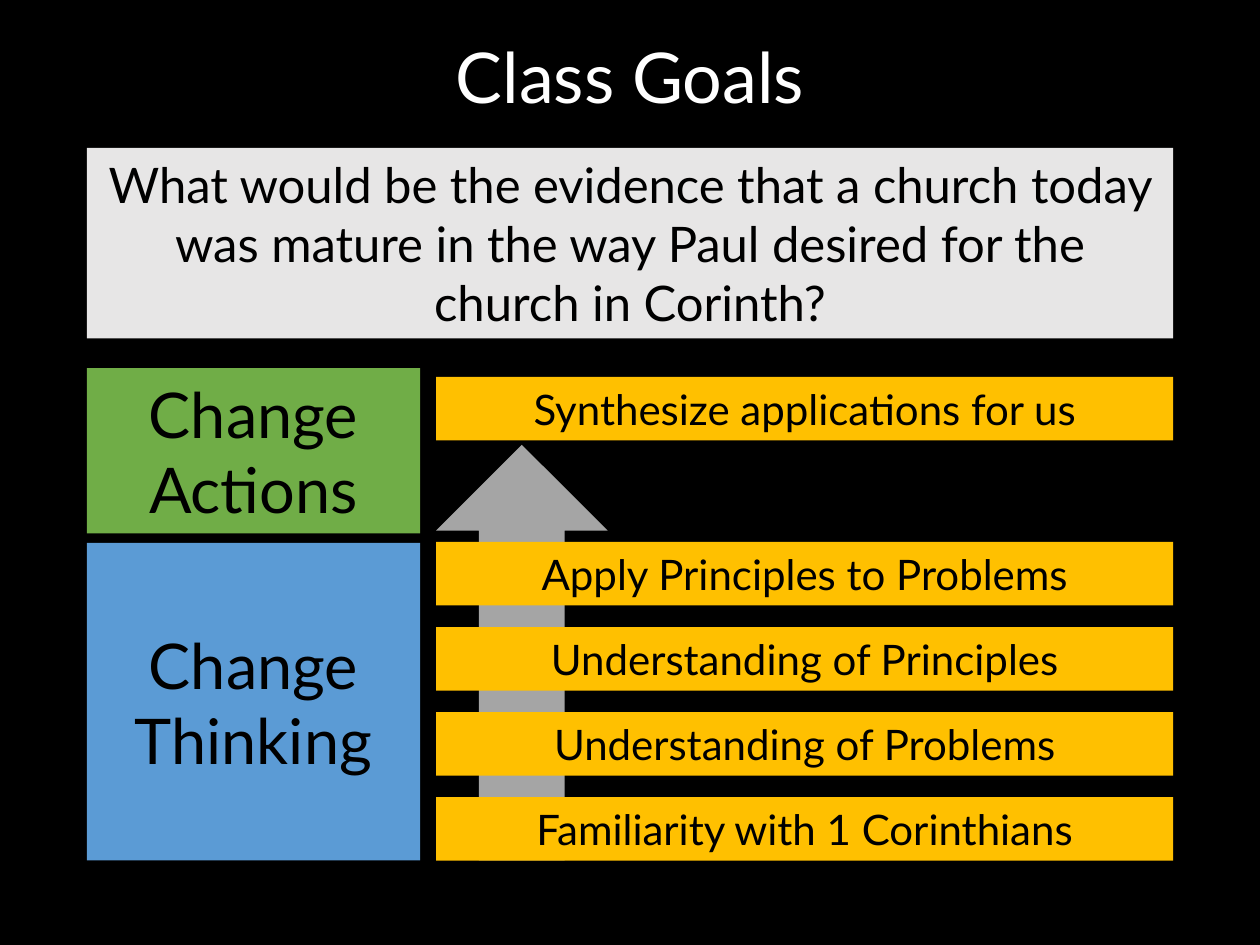
"""Build the Class Goals slide with its goal blocks and ladder of steps."""
from pptx import Presentation
from pptx.dml.color import RGBColor
from pptx.enum import shapes, text
from pptx.util import Pt

BLACK = RGBColor(0x00, 0x00, 0x00)
WHITE = RGBColor(0xFF, 0xFF, 0xFF)
LIGHT_GRAY = RGBColor(0xE7, 0xE6, 0xE6)
GRAY = RGBColor(0xA5, 0xA5, 0xA5)
GREEN = RGBColor(0x70, 0xAD, 0x47)
BLUE = RGBColor(0x5B, 0x9B, 0xD5)
GOLD = RGBColor(0xFF, 0xC0, 0x00)
FONT = "Lato"

TITLE = "Class Goals"
QUESTION = ("What would be the evidence that a church today was mature in the way "
            "Paul desired for the church in Corinth?")
GOALS = [("Change Actions", GREEN, 210.4, 94.5), ("Change Thinking", BLUE, 310.2, 181.5)]
RESULT = "Synthesize applications for us"
STEPS = ["Apply Principles to Problems", "Understanding of Principles",
         "Understanding of Problems", "Familiarity with 1 Corinthians"]

LEFT, WIDTH = 49.6, 620.8
GOAL_WIDTH = 190.5
STEP_LEFT = 249.2
STEP_WIDTH = LEFT + WIDTH - STEP_LEFT
STEP_HEIGHT = 36.3
RESULT_TOP, STEPS_TOP, STEP_PITCH = 215.3, 309.7, 48.6


def add_words(shape, words, size, color=BLACK):
    frame = shape.text_frame
    frame.word_wrap = True
    frame.vertical_anchor = text.MSO_ANCHOR.MIDDLE
    paragraph = frame.paragraphs[0]
    paragraph.alignment = text.PP_ALIGN.CENTER
    run = paragraph.add_run()
    run.text = words
    run.font.name = FONT
    run.font.size = Pt(size)
    run.font.color.rgb = color
    return paragraph


def add_block(slide, box, fill, kind=shapes.MSO_SHAPE.RECTANGLE):
    shape = slide.shapes.add_shape(kind, *map(Pt, box))
    shape.shadow.inherit = False
    shape.fill.solid()
    shape.fill.fore_color.rgb = fill
    shape.line.fill.background()
    return shape


def main():
    presentation = Presentation()
    presentation.slide_width, presentation.slide_height = Pt(720), Pt(540)
    slide = presentation.slides.add_slide(presentation.slide_layouts[6])
    slide.background.fill.solid()
    slide.background.fill.fore_color.rgb = BLACK

    add_block(slide, (STEP_LEFT, 254.2, 98, 237.5), GRAY, shapes.MSO_SHAPE.UP_ARROW)

    title = slide.shapes.add_textbox(*map(Pt, (LEFT, 18, WIDTH, 56.9)))
    add_words(title, TITLE, 40, WHITE).line_spacing = 0.9

    for words, fill, top, height in GOALS:
        add_words(add_block(slide, (LEFT, top, GOAL_WIDTH, height), fill), words, 36)

    bars = [(RESULT, RESULT_TOP)]
    bars += [(step, STEPS_TOP + index * STEP_PITCH) for index, step in enumerate(STEPS)]
    for words, top in bars:
        add_words(add_block(slide, (STEP_LEFT, top, STEP_WIDTH, STEP_HEIGHT), GOLD), words, 24)

    add_words(add_block(slide, (LEFT, 84.5, WIDTH, 108.9), LIGHT_GRAY), QUESTION, 28)
    presentation.save("out.pptx")


if __name__ == "__main__":
    main()
